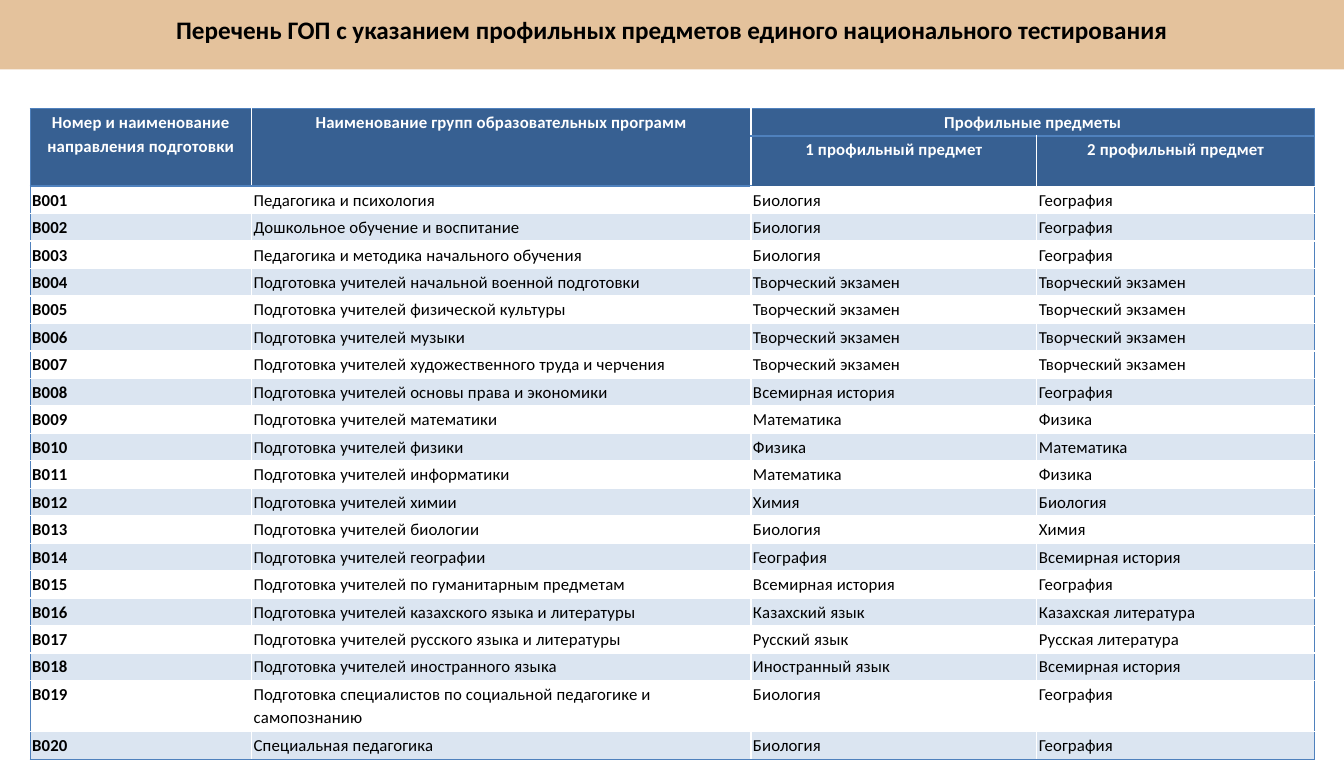
from dataclasses import dataclass
from typing import NamedTuple

from lxml.etree import SubElement as Sub
from pptx import Presentation
from pptx.dml.color import RGBColor as Rgb
from pptx.enum.shapes import MSO_SHAPE as Shape
from pptx.enum.text import MSO_ANCHOR as Anchor, PP_ALIGN as Align
from pptx.oxml.ns import qn
from pptx.util import Inches, Pt


@dataclass(frozen=True)
class Theme:
    font: str = "Calibri"
    title: int = 18
    body: int = 12
    ink: str = "000000"
    white: str = "FFFFFF"
    band: str = "E4C29C"
    head: str = "376092"
    blue: str = "4F81BD"
    tint: str = "20000"


class Group(NamedTuple):
    name: str
    first: str
    second: str


class Head(NamedTuple):
    row: int
    col: int
    text: str
    last: tuple[int, int]


THEME = Theme()
WIDE, HIGH = 13.35, 7.68
COLS = [2.2, 4.96, 2.84, 2.76]
LEFT, TOP, TALL = 0.3, 1.08, 6.47
HEAD_TOP, HEAD_SUB, DOUBLE = 0.27, 0.5, 0.51
TITLE = "Перечень ГОП с указанием профильных предметов единого национального тестирования"

HEADS = [
    Head(0, 0, "Номер и наименование направления подготовки", (1, 0)),
    Head(0, 1, "Наименование групп образовательных программ", (1, 1)),
    Head(0, 2, "Профильные предметы", (0, 3)),
    Head(1, 2, "1 профильный предмет", (1, 2)),
    Head(1, 3, "2 профильный предмет", (1, 3)),
]

GROUPS = [
    Group("Педагогика и психология", "Биология", "География"),
    Group("Дошкольное обучение и воспитание", "Биология", "География"),
    Group("Педагогика и методика начального обучения", "Биология", "География"),
    Group("Подготовка учителей начальной военной подготовки", "Творческий экзамен", "Творческий экзамен"),
    Group("Подготовка учителей физической культуры", "Творческий экзамен", "Творческий экзамен"),
    Group("Подготовка учителей музыки", "Творческий экзамен", "Творческий экзамен"),
    Group("Подготовка учителей художественного труда и черчения", "Творческий экзамен", "Творческий экзамен"),
    Group("Подготовка учителей основы права и экономики", "Всемирная история", "География"),
    Group("Подготовка учителей математики", "Математика", "Физика"),
    Group("Подготовка учителей физики", "Физика", "Математика"),
    Group("Подготовка учителей информатики", "Математика", "Физика"),
    Group("Подготовка учителей химии", "Химия", "Биология"),
    Group("Подготовка учителей биологии", "Биология", "Химия"),
    Group("Подготовка учителей географии", "География", "Всемирная история"),
    Group("Подготовка учителей по гуманитарным предметам", "Всемирная история", "География"),
    Group("Подготовка учителей казахского языка и литературы", "Казахский язык", "Казахская литература"),
    Group("Подготовка учителей русского языка и литературы", "Русский язык", "Русская литература"),
    Group("Подготовка учителей иностранного языка", "Иностранный язык", "Всемирная история"),
    Group("Подготовка специалистов по социальной педагогике и самопознанию", "Биология", "География"),
    Group("Специальная педагогика", "Биология", "География"),
]
LONG = 18


def add_run(para, text: str, size: int, color: str, bold: bool):
    run = para.add_run()
    run.text = text
    font = run.font
    font.name, font.size, font.bold = THEME.font, Pt(size), bold
    font.color.rgb = Rgb.from_string(color)
    return run


def add_band(slide) -> None:
    band = slide.shapes.add_shape(Shape.RECTANGLE, 0, Inches(-0.02), Inches(WIDE), Inches(0.71))
    band.shadow.inherit = False
    band.fill.solid()
    band.fill.fore_color.rgb = Rgb.from_string(THEME.band)
    band.line.fill.background()


def add_title(slide) -> None:
    frame = slide.shapes.add_textbox(0, Inches(-0.02), Inches(WIDE), Inches(0.63)).text_frame
    frame.word_wrap = True
    frame.vertical_anchor = Anchor.MIDDLE
    frame.margin_left = frame.margin_right = Inches(0.12)
    frame.margin_top = frame.margin_bottom = Inches(0.06)
    para = frame.paragraphs[0]
    para.alignment = Align.CENTER
    add_run(para, TITLE, THEME.title, THEME.ink, True)


def add_edge(cell, side: str, width: int) -> None:
    line = Sub(cell._tc.get_or_add_tcPr(), qn(f"a:ln{side}"), w=str(Pt(width)))
    Sub(Sub(line, qn("a:solidFill")), qn("a:srgbClr"), val=THEME.blue)


def style_cell(cell, row: int, col: int) -> None:
    cell.margin_left = cell.margin_right = Inches(0.02)
    cell.margin_top = cell.margin_bottom = Inches(0.01)
    if col == 0:
        add_edge(cell, "L", 1)
    add_edge(cell, "R", 1)
    if row == 0:
        add_edge(cell, "T", 1)
    add_edge(cell, "B", 2 if row == 0 or (row == 1 and col < 2) else 1)
    if row > 1 and row % 2 == 0:
        cell.fill.background()
        return
    cell.fill.solid()
    color = cell.fill.fore_color
    color.rgb = Rgb.from_string(THEME.head if row < 2 else THEME.blue)
    if row > 1:
        tone = cell._tc.tcPr.find(f"{qn('a:solidFill')}/{qn('a:srgbClr')}")
        Sub(tone, qn("a:alpha"), val=THEME.tint)


def fill_cell(cell, text: str, color: str, bold: bool, align: Align) -> None:
    para = cell.text_frame.paragraphs[0]
    para.alignment = align
    para.line_spacing = 1.15
    run = add_run(para, text, THEME.body, color, bold)
    run.font._element.set("spc", "10")


def add_grid(slide) -> None:
    count = len(GROUPS) + 2
    single = (TALL - HEAD_TOP - HEAD_SUB - DOUBLE) / (len(GROUPS) - 1)
    highs = [HEAD_TOP, HEAD_SUB] + [DOUBLE if i == LONG else single for i in range(len(GROUPS))]
    table = slide.shapes.add_table(
        count, len(COLS), Inches(LEFT), Inches(TOP), Inches(sum(COLS)), Inches(TALL)
    ).table
    table.first_row = table.horz_banding = False
    for col, width in zip(table.columns, COLS):
        col.width = Inches(width)
    for row, high in zip(table.rows, highs):
        row.height = Inches(high)
    for row in range(count):
        for col in range(len(COLS)):
            style_cell(table.cell(row, col), row, col)
    for head in HEADS:
        cell = table.cell(head.row, head.col)
        if head.last != (head.row, head.col):
            cell.merge(table.cell(*head.last))
        fill_cell(cell, head.text, THEME.white, True, Align.CENTER)
    for num, group in enumerate(GROUPS, 1):
        for col, text in enumerate((f"В{num:03}", *group)):
            fill_cell(table.cell(num + 1, col), text, THEME.ink, col == 0, Align.LEFT)


def main() -> None:
    deck = Presentation()
    deck.slide_width, deck.slide_height = Inches(WIDE), Inches(HIGH)
    slide = deck.slides.add_slide(deck.slide_layouts[6])
    add_band(slide)
    add_title(slide)
    add_grid(slide)
    deck.save("out.pptx")


if __name__ == "__main__":
    main()
